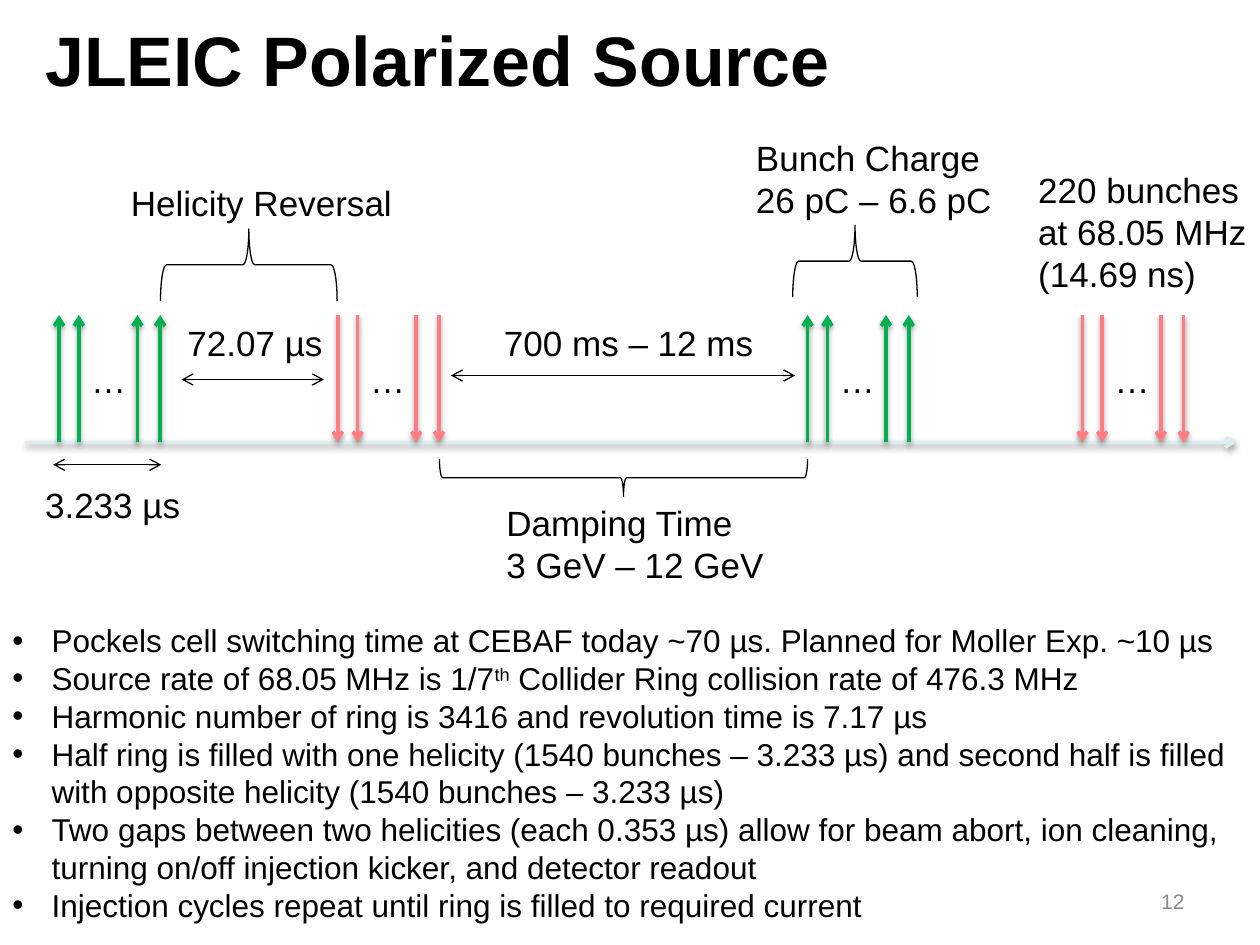
from dataclasses import dataclass

from lxml.etree import SubElement
from pptx import Presentation
from pptx.dml.color import RGBColor
from pptx.enum.shapes import MSO_CONNECTOR, MSO_SHAPE
from pptx.enum.text import MSO_ANCHOR, PP_ALIGN
from pptx.oxml.ns import qn
from pptx.util import Cm, Pt


@dataclass
class Theme:
    font: str = "Arial"
    black: str = "000000"
    grey: str = "8C8C8C"
    axis: str = "DAEDEF"
    up: str = "00B050"
    down: str = "FF7C80"
    title: int = 40
    label: int = 20
    body: int = 18
    number: int = 12
    thin: float = 0.75
    thick: float = 2


theme = Theme()

prs = Presentation()
prs.slide_width, prs.slide_height = Cm(25.4), Cm(19.05)
s = prs.slides.add_slide(prs.slide_layouts[6])


def add_text(box, paragraphs, size, color=theme.black, bold=False, wrap=False):
    tf = s.shapes.add_textbox(*map(Cm, box)).text_frame
    tf.word_wrap = wrap
    for i, runs in enumerate(paragraphs):
        p = tf.paragraphs[0] if i == 0 else tf.add_paragraph()
        for text in runs:
            r = p.add_run()
            r.text = text
            r.font.name = theme.font
            r.font.size = Pt(size)
            r.font.bold = bold
            r.font.color.rgb = RGBColor.from_string(color)
    return tf


def add_arrow(start, end, color, width, ends, shadow=False):
    line = s.shapes.add_connector(MSO_CONNECTOR.STRAIGHT, *map(Cm, start + end))
    line.line.color.rgb = RGBColor.from_string(color)
    line.line.width = Pt(width)
    ln = line.line._get_or_add_ln()
    for tag in ends:
        SubElement(ln, qn(tag), type="arrow")
    effects = SubElement(line._element.spPr, qn("a:effectLst"))
    if shadow:
        outer = SubElement(effects, qn("a:outerShdw"), blurRad=str(Pt(3.1)),
                           dist=str(Pt(1.6)), dir="5400000", rotWithShape="0")
        shade = SubElement(outer, qn("a:srgbClr"), val=theme.black)
        SubElement(shade, qn("a:alpha"), val="38000")


tf = add_text((0.66, 0, 24.08, 2.34), [["JLEIC Polarized Source"]], theme.title, bold=True, wrap=True)
tf.vertical_anchor = MSO_ANCHOR.MIDDLE

axis_y, bunch_top = 8.92, 6.35
add_arrow((0.51, axis_y), (24.92, axis_y), theme.axis, theme.thick, ["a:tailEnd"], shadow=True)

trains = [
    (1.19, axis_y, bunch_top, theme.up),
    (16.28, axis_y, bunch_top, theme.up),
    (6.81, bunch_top, axis_y, theme.down),
    (21.82, bunch_top, axis_y, theme.down),
]
for left, tail_y, head_y, color in trains:
    for offset in (0, 0.4, 1.58, 2.04):
        x = left + offset
        add_arrow((x, tail_y), (x, head_y), color, theme.thick, ["a:tailEnd"], shadow=True)
    add_text((left + 0.4, 7.11, 1.22, 1.12), [["…"]], theme.label)

for x1, x2, y in [(3.66, 6.53, 7.65), (9.09, 16.03, 7.57), (1.07, 3.25, 9.37)]:
    add_arrow((x1, y), (x2, y), theme.black, theme.thin, ["a:headEnd", "a:tailEnd"])

braces = [
    ((12.19, 5.92, 0.76, 7.42), 270),
    ((4.29, 3.56, 1.45, 3.56), 90),
    ((16.51, 4.01, 1.45, 2.51), 90),
]
for box, rotation in braces:
    sp = s.shapes.add_shape(MSO_SHAPE.LEFT_BRACE, *map(Cm, box))
    sp.rotation = rotation
    sp.shadow.inherit = False
    sp.fill.background()
    sp.line.color.rgb = RGBColor.from_string(theme.black)
    sp.line.width = Pt(theme.thin)

labels = [
    ((2.39, 3.53, 5.82, 1.12), ["Helicity Reversal"]),
    ((3.53, 6.35, 3.25, 1.12), ["72.07 µs"]),
    ((9.96, 9.98, 5.74, 1.96), ["Damping Time", "3 GeV – 12 GeV"]),
    ((9.91, 6.35, 5.56, 1.12), ["700 ms – 12 ms"]),
    ((0.66, 9.63, 3.25, 1.12), ["3.233 µs"]),
    ((14.99, 2.62, 5.49, 1.96), ["Bunch Charge", "26 pC – 6.6 pC"]),
    ((20.68, 3.28, 4.75, 2.82), ["220 bunches", "at 68.05 MHz", "(14.69 ns)"]),
]
for box, lines in labels:
    add_text(box, [[text] for text in lines], theme.label)

tf = add_text((18.21, 17.65, 5.92, 1.02), [["12"]], theme.number, theme.grey, wrap=True)
tf.vertical_anchor = MSO_ANCHOR.MIDDLE
tf.paragraphs[0].alignment = PP_ALIGN.RIGHT

notes = [
    ["Pockels cell switching time at CEBAF today ~70 µs. Planned for Moller Exp. ~10 µs"],
    ["Source rate of 68.05 MHz is 1/7", "th", " Collider Ring collision rate of 476.3 MHz"],
    ["Harmonic number of ring is 3416 and revolution time is 7.17 µs"],
    ["Half ring is filled with one helicity (1540 bunches – 3.233 µs) and second half is filled "
     "with opposite helicity (1540 bunches – 3.233 µs)"],
    ["Two gaps between two helicities (each 0.353 µs) allow for beam abort, ion cleaning, "
     "turning on/off injection kicker, and detector readout"],
    ["Injection cycles repeat until ring is filled to required current"],
]
tf = add_text((0, 12.4, 25.43, 6.4), notes, theme.body, wrap=True)
for p in tf.paragraphs:
    pPr = p._p.get_or_add_pPr()
    pPr.set("marL", str(Cm(0.79)))
    pPr.set("indent", str(-Cm(0.79)))
    SubElement(pPr, qn("a:buFont"), typeface=theme.font)
    SubElement(pPr, qn("a:buChar"), char="•")
tf.paragraphs[1].runs[1]._r.get_or_add_rPr().set("baseline", "30000")

prs.save("out.pptx")
